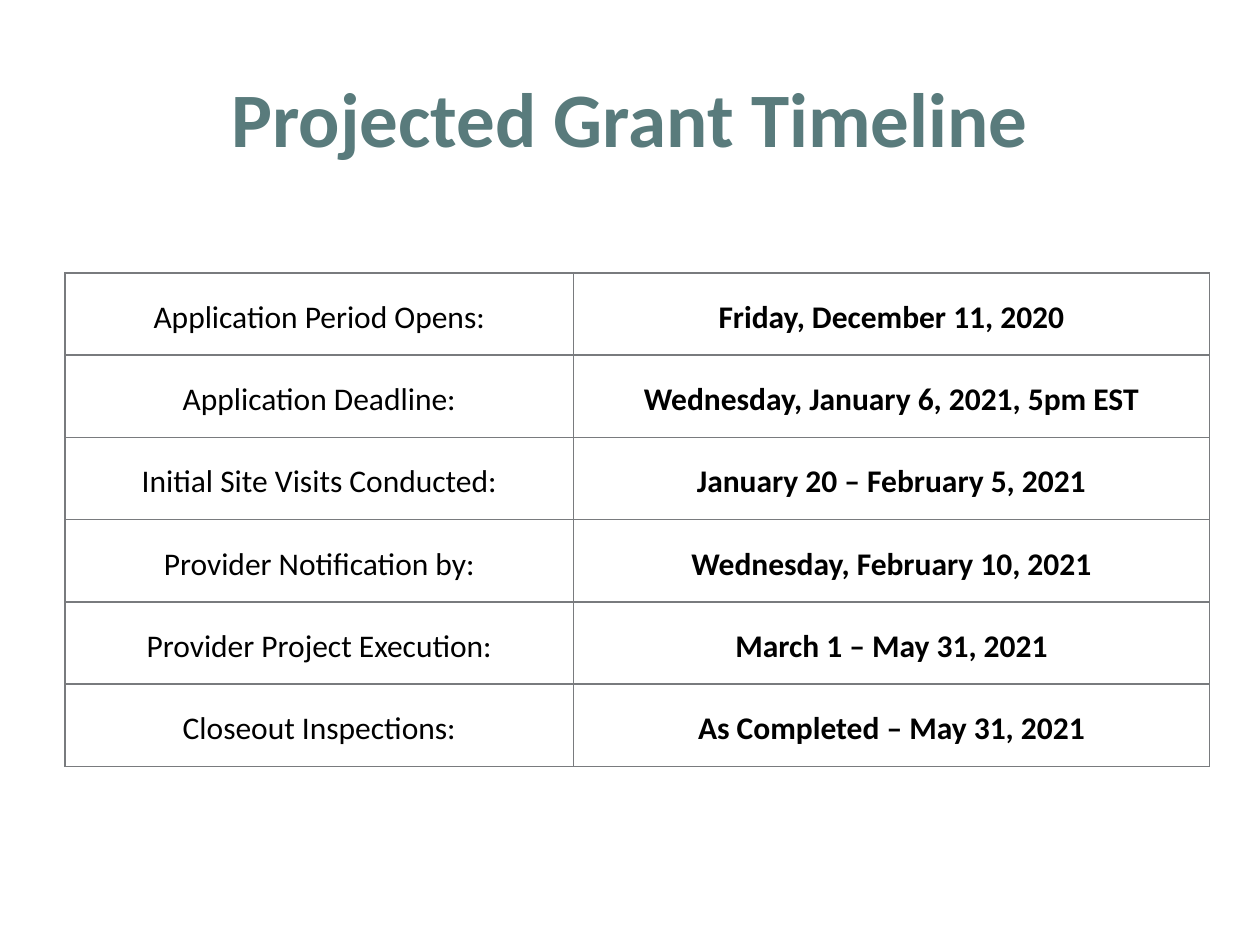
from dataclasses import dataclass

from lxml.etree import SubElement
from pptx import Presentation
from pptx.dml.color import RGBColor
from pptx.enum.text import MSO_ANCHOR, PP_ALIGN
from pptx.oxml.ns import qn
from pptx.util import Pt


@dataclass(frozen=True)
class Theme:
    """Colours, font and sizes of the slide."""
    font: str = "Calibri"
    heading: str = "597B7C"
    body: str = "000000"
    border: str = "797B7E"
    title_size: int = 44
    body_size: int = 18
    border_width: int = 1


class SlideBuilder:
    """Draws styled elements on the current slide."""

    def __init__(self, slide, theme):
        self.slide = slide
        self.theme = theme

    def style(self, paragraph, size, color, bold):
        """Centre a paragraph and set its font."""
        paragraph.alignment = PP_ALIGN.CENTER
        paragraph.font.name = self.theme.font
        paragraph.font.size = Pt(size)
        paragraph.font.bold = bold
        paragraph.font.color.rgb = RGBColor.from_string(color)

    def title(self, wording, left, top, width, height):
        """Place and format the title placeholder."""
        heading = self.slide.shapes.title
        heading.left, heading.top = Pt(left), Pt(top)
        heading.width, heading.height = Pt(width), Pt(height)
        heading.text_frame.text = wording
        heading.text_frame.vertical_anchor = MSO_ANCHOR.MIDDLE
        self.style(heading.text_frame.paragraphs[0], self.theme.title_size,
                   self.theme.heading, True)

    def border(self, cell):
        """Line all four sides of a cell."""
        properties = cell._tc.get_or_add_tcPr()
        for side in ("a:lnL", "a:lnR", "a:lnT", "a:lnB"):
            line = SubElement(properties, qn(side), w=str(Pt(self.theme.border_width)))
            fill = SubElement(line, qn("a:solidFill"))
            SubElement(fill, qn("a:srgbClr"), val=self.theme.border)

    def table(self, entries, left, top, column_widths, row_height):
        """Add a bordered table whose last column is bold."""
        timeline = self.slide.shapes.add_table(
            len(entries), len(column_widths), Pt(left), Pt(top),
            Pt(sum(column_widths)), Pt(row_height * len(entries))).table
        timeline.first_row = timeline.horz_banding = False
        for column, width in zip(timeline.columns, column_widths):
            column.width = Pt(width)
        for row, entry in zip(timeline.rows, entries):
            row.height = Pt(row_height)
            for index, (cell, wording) in enumerate(zip(row.cells, entry)):
                cell.text = wording
                self.border(cell)
                cell.fill.background()
                paragraph = cell.text_frame.paragraphs[0]
                paragraph.line_spacing = 1.5
                self.style(paragraph, self.theme.body_size, self.theme.body,
                           index == len(entry) - 1)


def main():
    """Build the grant timeline slide."""
    presentation = Presentation()
    presentation.slide_width, presentation.slide_height = Pt(720), Pt(540)
    title_only = presentation.slide_layouts[5]
    builder = SlideBuilder(presentation.slides.add_slide(title_only), Theme())
    builder.title("Projected Grant Timeline", 36, 21.6, 648, 90)
    milestones = [
        ("Application Period Opens:", "Friday, December 11, 2020"),
        ("Application Deadline:", "Wednesday, January 6, 2021, 5pm EST"),
        ("Initial Site Visits Conducted:", "January 20 – February 5, 2021"),
        ("Provider Notification by:", "Wednesday, February 10, 2021"),
        ("Provider Project Execution:", "March 1 – May 31, 2021"),
        ("Closeout Inspections:", "As Completed – May 31, 2021"),
    ]
    builder.table(milestones, 37.2, 156, (290.6, 363.4), 47)
    presentation.save("out.pptx")


if __name__ == "__main__":
    main()
